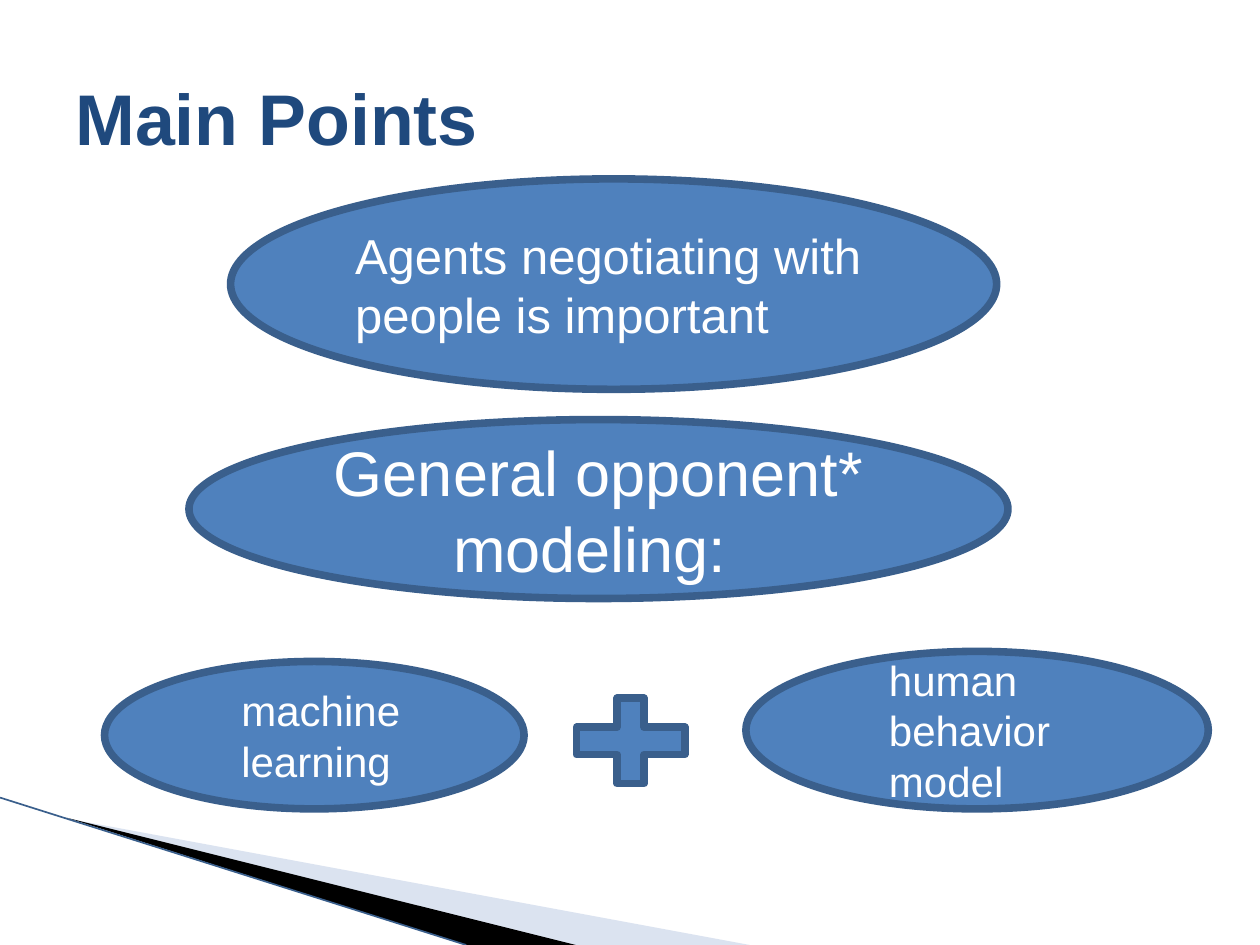
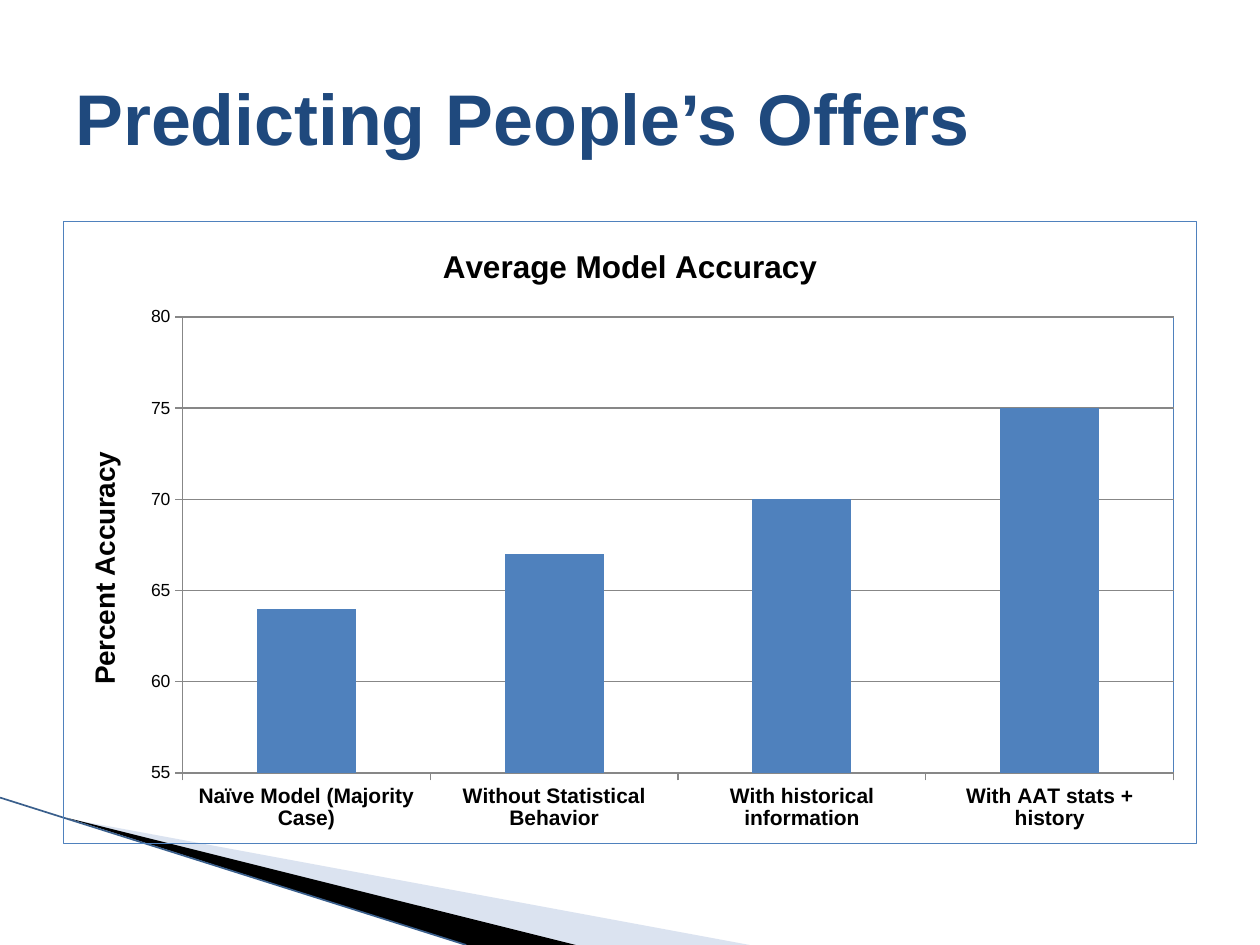
from dataclasses import dataclass
from typing import Optional

import pptx
import pptx.chart.data
import pptx.dml.color
import pptx.enum.chart
import pptx.enum.shapes
import pptx.enum.text
import pptx.oxml
import pptx.oxml.ns
import pptx.util
from pptx.util import Inches

FONT = "Arial"
COLORS = {
    "title": "1F497D",
    "accent": "4F81BD",
    "outline": "3A5F8C",
    "pale_band": "A7B9DB",
    "black": "000000",
    "white": "FFFFFF",
    "grid": "878787",
}
ALIGN = pptx.enum.text.PP_ALIGN
SHAPE = pptx.enum.shapes.MSO_SHAPE


@dataclass(frozen=True)
class Band:
    points: tuple
    color: str
    alpha: Optional[int] = None


@dataclass(frozen=True)
class Idea:
    text: str
    left: float
    top: float
    width: float
    height: float
    size: int = 24
    align: ALIGN = ALIGN.LEFT
    indented: bool = False
    preset: SHAPE = SHAPE.OVAL


BANDS = (
    Band(((0.55, 6.5), (5.95, 7.5), (4.56, 7.5)), "pale_band", 40),
    Band(((0.53, 6.49), (4.57, 7.5), (3.7, 7.5)), "black"),
)
IDEAS = (
    Idea("Agents negotiating with people is important", 1.83, 1.42, 6.08, 1.67, 28),
    Idea("General opponent* modeling: ", 1.5, 3.33, 6.5, 1.42, 36, ALIGN.CENTER),
    Idea("machine learning", 0.83, 5.25, 3.33, 1.17, indented=True),
    Idea("human behavior model", 5.92, 5.17, 3.67, 1.25, indented=True),
    Idea("", 4.42, 5.42, 1.17, 0.92, preset=SHAPE.MATH_PLUS),
)
ACCURACY = {
    "Naïve Model (Majority Case)": 64,
    "Without Statistical Behavior": 67,
    "With historical information": 70,
    "With AAT stats + history": 75,
}


def rgb(name: str) -> pptx.dml.color.RGBColor:
    return pptx.dml.color.RGBColor.from_string(COLORS[name])


def style_font(font, size: float, color: str, bold: bool = False) -> None:
    font.name = FONT
    font.size = pptx.util.Pt(size)
    font.bold = bold
    font.color.rgb = rgb(color)


def style_line(line, color: str, width: float) -> None:
    line.color.rgb = rgb(color)
    line.width = pptx.util.Pt(width)


def draw_band(slide, band: Band) -> None:
    start, *rest = [(Inches(x), Inches(y)) for x, y in band.points]
    builder = slide.shapes.build_freeform(*start)
    builder.add_line_segments(rest, close=True)
    wedge = builder.convert_to_shape()
    wedge.shadow.inherit = False
    wedge.fill.solid()
    wedge.fill.fore_color.rgb = rgb(band.color)
    wedge.line.fill.background()
    if band.alpha is not None:
        tint = wedge.element.spPr.find(".//" + pptx.oxml.ns.qn("a:srgbClr"))
        tint.append(pptx.oxml.parse_xml(
            f'<a:alpha {pptx.oxml.ns.nsdecls("a")} val="{band.alpha * 1000}"/>'))


def add_titled_slide(deck, title: str):
    slide = deck.slides.add_slide(deck.slide_layouts[6])
    for band in BANDS:
        draw_band(slide, band)
    edge = slide.shapes.add_connector(
        pptx.enum.shapes.MSO_CONNECTOR.STRAIGHT,
        Inches(0), Inches(6.33), Inches(3.7), Inches(7.5))
    style_line(edge.line, "outline", 0.95)
    edge.element.spPr.append(pptx.oxml.parse_xml(
        f'<a:effectLst {pptx.oxml.ns.nsdecls("a")}/>'))
    heading = slide.shapes.add_textbox(Inches(0.5), Inches(0.3), Inches(9), Inches(1.25))
    frame = heading.text_frame
    frame.word_wrap = True
    frame.vertical_anchor = pptx.enum.text.MSO_ANCHOR.MIDDLE
    frame.text = title
    style_font(frame.paragraphs[0].runs[0].font, 41, "title", True)
    return slide


def draw_idea(slide, idea: Idea) -> None:
    bubble = slide.shapes.add_shape(
        idea.preset, Inches(idea.left), Inches(idea.top),
        Inches(idea.width), Inches(idea.height))
    bubble.shadow.inherit = False
    bubble.fill.solid()
    bubble.fill.fore_color.rgb = rgb("accent")
    style_line(bubble.line, "outline", 4.33)
    if not idea.text:
        return
    frame = bubble.text_frame
    frame.word_wrap = True
    frame.vertical_anchor = pptx.enum.text.MSO_ANCHOR.MIDDLE
    frame.text = idea.text
    paragraph = frame.paragraphs[0]
    paragraph.alignment = idea.align
    if idea.indented:
        paragraph.level = 1
        properties = paragraph.runs[0].font and paragraph._p.get_or_add_pPr()
        properties.set("marL", str(Inches(0.5)))
        properties.set("indent", "0")
    style_font(paragraph.runs[0].font, idea.size, "white")


def frame_properties(width: float):
    return pptx.oxml.parse_xml(
        f'<c:spPr {pptx.oxml.ns.nsdecls("c", "a")}><a:noFill/>'
        f'<a:ln w="{pptx.util.Pt(width)}"><a:solidFill>'
        f'<a:srgbClr val="{COLORS["accent"]}"/></a:solidFill></a:ln></c:spPr>')


def frame_chart(chart) -> None:
    chart_part = chart.element.find(pptx.oxml.ns.qn("c:chart"))
    chart_part.addnext(frame_properties(0.75))
    plot_area = chart_part.find(pptx.oxml.ns.qn("c:plotArea"))
    for layout in plot_area.findall(pptx.oxml.ns.qn("c:layout")):
        plot_area.remove(layout)
    box = {"x": 0.105, "y": 0.154, "w": 0.875, "h": 0.733}
    modes = '<c:layoutTarget val="inner"/><c:xMode val="edge"/><c:yMode val="edge"/>'
    sizes = "".join(f'<c:{key} val="{value}"/>' for key, value in box.items())
    plot_area.insert(0, pptx.oxml.parse_xml(
        f'<c:layout {pptx.oxml.ns.nsdecls("c")}><c:manualLayout>'
        f'{modes}{sizes}</c:manualLayout></c:layout>'))
    plot_area.append(frame_properties(0.75))


def write_chart_title(titled, text: str, size: int) -> None:
    frame = titled.text_frame
    frame.text = text
    style_font(frame.paragraphs[0].runs[0].font, size, "black", True)


def draw_accuracy_chart(slide) -> None:
    data = pptx.chart.data.CategoryChartData()
    data.categories = list(ACCURACY)
    data.add_series("Series 1", list(ACCURACY.values()))
    chart = slide.shapes.add_chart(
        pptx.enum.chart.XL_CHART_TYPE.COLUMN_CLUSTERED,
        Inches(0.5), Inches(1.75), Inches(9), Inches(4.95), data).chart
    style_font(chart.font, 10, "black")
    chart.has_legend = False
    chart.has_title = True
    write_chart_title(chart.chart_title, "Average Model Accuracy", 18)
    plot = chart.plots[0]
    plot.vary_by_categories = False
    plot.gap_width = 150
    bars = plot.series[0].format.fill
    bars.solid()
    bars.fore_color.rgb = rgb("accent")

    models, percent = chart.category_axis, chart.value_axis
    for axis in (models, percent):
        axis.major_tick_mark = pptx.enum.chart.XL_TICK_MARK.OUTSIDE
        style_line(axis.format.line, "grid", 0.75)
    style_font(models.tick_labels.font, 12, "black", True)
    style_font(percent.tick_labels.font, 10, "black")
    percent.minimum_scale = 55
    percent.maximum_scale = 80
    percent.major_unit = 5
    percent.has_major_gridlines = True
    style_line(percent.major_gridlines.format.line, "grid", 0.75)
    percent.has_title = True
    write_chart_title(percent.axis_title, "Percent Accuracy", 16)
    frame_chart(chart)


def main() -> None:
    deck = pptx.Presentation()
    deck.slide_width = Inches(10)
    deck.slide_height = Inches(7.5)
    main_points = add_titled_slide(deck, "Main Points")
    for idea in IDEAS:
        draw_idea(main_points, idea)
    draw_accuracy_chart(add_titled_slide(deck, "Predicting People’s Offers"))
    deck.save("out.pptx")


if __name__ == "__main__":
    main()
